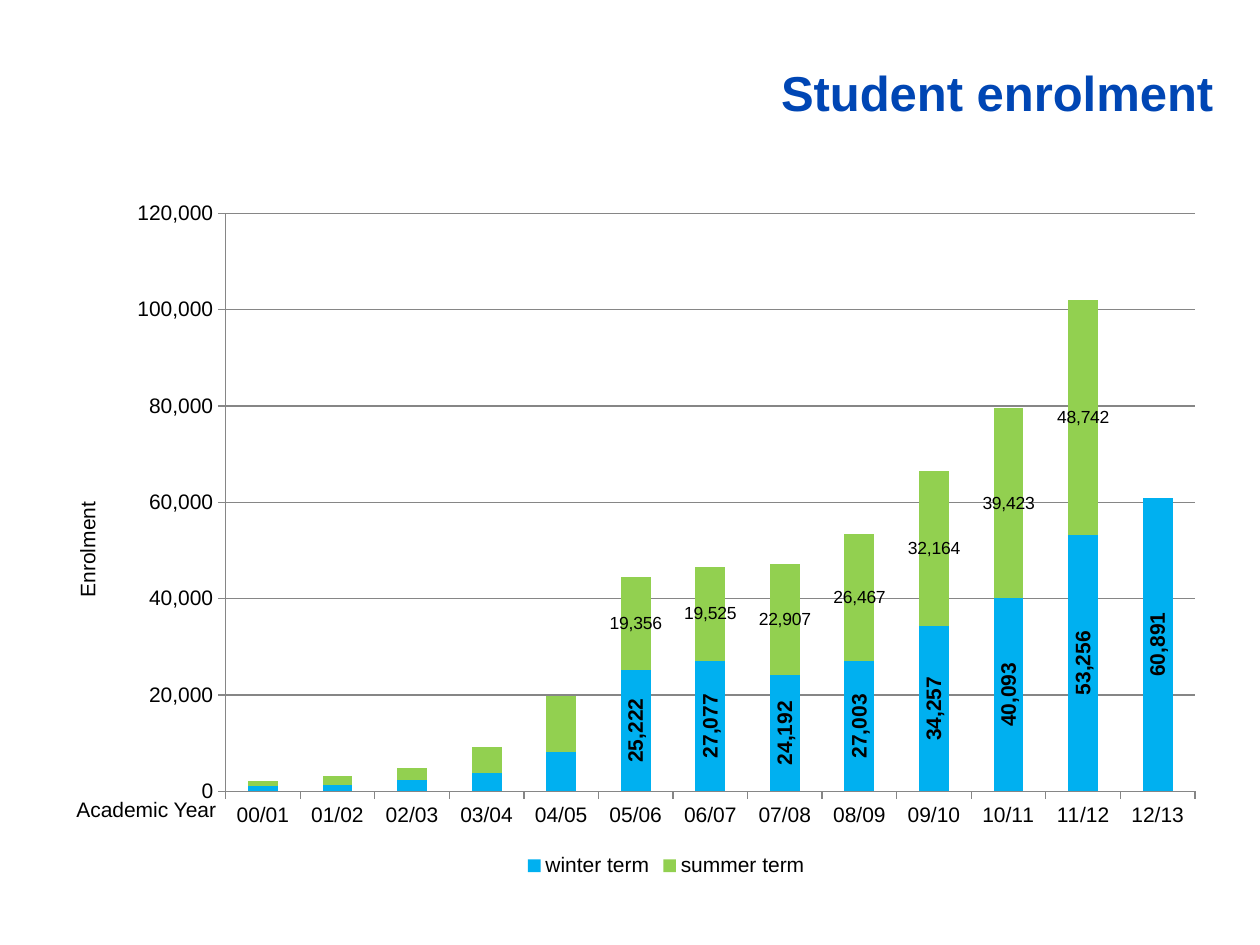
from dataclasses import dataclass
from lxml.etree import SubElement as Sub, Element
from pptx import Presentation
from pptx.chart.data import CategoryChartData as Data
from pptx.dml.color import RGBColor as Color
from pptx.enum.chart import XL_CHART_TYPE as Kind, XL_LEGEND_POSITION as Spot
from pptx.enum.chart import XL_TICK_MARK as Tick
from pptx.enum.text import MSO_ANCHOR as Anchor, MSO_AUTO_SIZE as Fit, PP_ALIGN as Align
from pptx.oxml.ns import qn
from pptx.util import Pt


@dataclass(frozen=True)
class Theme:
    face: str = "Arial"
    head: int = 28
    text: int = 12
    small: int = 10
    ink: str = "000000"
    blue: str = "0046B4"
    winter: str = "00B0F0"
    summer: str = "92D050"
    grid: str = "868686"


THEME = Theme()
YEARS = [f"{y:02}/{y + 1:02}" for y in range(13)]
WINTER = [1146, 1379, 2379, 3738, 8191, 25222, 27077, 24192, 27003,
          34257, 40093, 53256, 60891]
SUMMER = [957, 1784, 2429, 5418, 11632, 19356, 19525, 22907, 26467,
          32164, 39423, 48742, None]
UNMARKED = 5
PLOT = {"x": 0.1, "y": 0.04, "w": 0.88, "h": 0.83}


def style(font, size, color=THEME.ink, bold=False):
    font.name = THEME.face
    font.size = Pt(size)
    font.bold = bold
    font.color.rgb = Color.from_string(color)


def place(shape, box):
    shape.left, shape.top, shape.width, shape.height = map(Pt, box)


def add_title(slide, box):
    title = slide.shapes.title
    place(title, box)
    frame = title.text_frame
    frame.word_wrap = True
    frame.auto_size = Fit.SHAPE_TO_FIT_TEXT
    frame.vertical_anchor = Anchor.MIDDLE
    para = frame.paragraphs[0]
    para.alignment = Align.RIGHT
    run = para.add_run()
    run.text = "Student enrolment"
    style(run.font, THEME.head, THEME.blue, True)


def add_label(slide, box, text, turned=False):
    label = slide.shapes.add_textbox(*map(Pt, box))
    frame = label.text_frame
    frame.word_wrap = True
    frame.auto_size = Fit.SHAPE_TO_FIT_TEXT
    if turned:
        label.element.txBody.bodyPr.set("vert", "vert270")
    run = frame.paragraphs[0].add_run()
    run.text = text
    style(run.font, THEME.text)


def set_plot(chart):
    area = chart.element.find(".//" + qn("c:plotArea"))
    for old in area.findall(qn("c:layout")):
        area.remove(old)
    layout = Element(qn("c:layout"))
    area.insert(0, layout)
    manual = Sub(layout, qn("c:manualLayout"))
    rules = {"layoutTarget": "inner", "xMode": "edge", "yMode": "edge", **PLOT}
    for name, value in rules.items():
        Sub(manual, qn("c:" + name)).set("val", str(value))


def set_axis(axis):
    axis.major_tick_mark = Tick.OUTSIDE
    axis.minor_tick_mark = Tick.NONE
    axis.format.line.color.rgb = Color.from_string(THEME.grid)
    style(axis.tick_labels.font, THEME.text)


def set_series(series, color, size, bold):
    series.format.fill.solid()
    series.format.fill.fore_color.rgb = Color.from_string(color)
    series.invert_if_negative = False
    labels = series.data_labels
    labels.show_value = True
    labels.number_format = "#,##0"
    labels.number_format_is_linked = False
    style(labels.font, size, bold=bold)


def hide_labels(marks):
    for index in reversed(range(UNMARKED)):
        mark = Element(qn("c:dLbl"))
        Sub(mark, qn("c:idx")).set("val", str(index))
        Sub(mark, qn("c:delete")).set("val", "1")
        marks.insert(0, mark)


def add_graph(slide, box):
    data = Data(number_format="#,##0")
    data.categories = YEARS
    data.add_series("winter term", WINTER)
    data.add_series("summer term", SUMMER)
    frame = slide.shapes.add_chart(Kind.COLUMN_STACKED, *map(Pt, box), data)
    chart = frame.chart
    chart.has_title = False
    style(chart.font, THEME.small)
    set_plot(chart)
    plot = chart.plots[0]
    plot.gap_width = 150
    plot.overlap = 100
    plot.vary_by_categories = False
    winter, summer = plot.series
    set_series(winter, THEME.winter, THEME.text, True)
    set_series(summer, THEME.summer, THEME.small, False)
    groups = chart.element.xpath(".//c:ser/c:dLbls")
    for marks in groups:
        hide_labels(marks)
    body = groups[0].find(qn("c:txPr")).find(qn("a:bodyPr"))
    body.set("rot", "-5400000")
    body.set("vert", "horz")
    for axis in (chart.category_axis, chart.value_axis):
        set_axis(axis)
    scale = chart.value_axis
    scale.minimum_scale, scale.maximum_scale, scale.major_unit = 0, 120000, 20000
    scale.tick_labels.number_format = "#,##0"
    scale.tick_labels.number_format_is_linked = False
    scale.has_major_gridlines = True
    scale.major_gridlines.format.line.color.rgb = Color.from_string(THEME.grid)
    chart.has_legend = True
    chart.legend.position = Spot.BOTTOM
    chart.legend.include_in_layout = False
    style(chart.legend.font, THEME.text)


def main():
    deck = Presentation()
    deck.slide_width, deck.slide_height = Pt(720), Pt(540)
    slide = deck.slides.add_slide(deck.slide_layouts[5])
    add_title(slide, (241, 32, 459.5, 41))
    add_label(slide, (39, 142, 29, 206.5), "Enrolment", True)
    add_label(slide, (36.5, 451.5, 104.5, 21.5), "Academic Year")
    add_graph(slide, (66, 106, 629.5, 398))
    deck.save("out.pptx")


if __name__ == "__main__":
    main()
